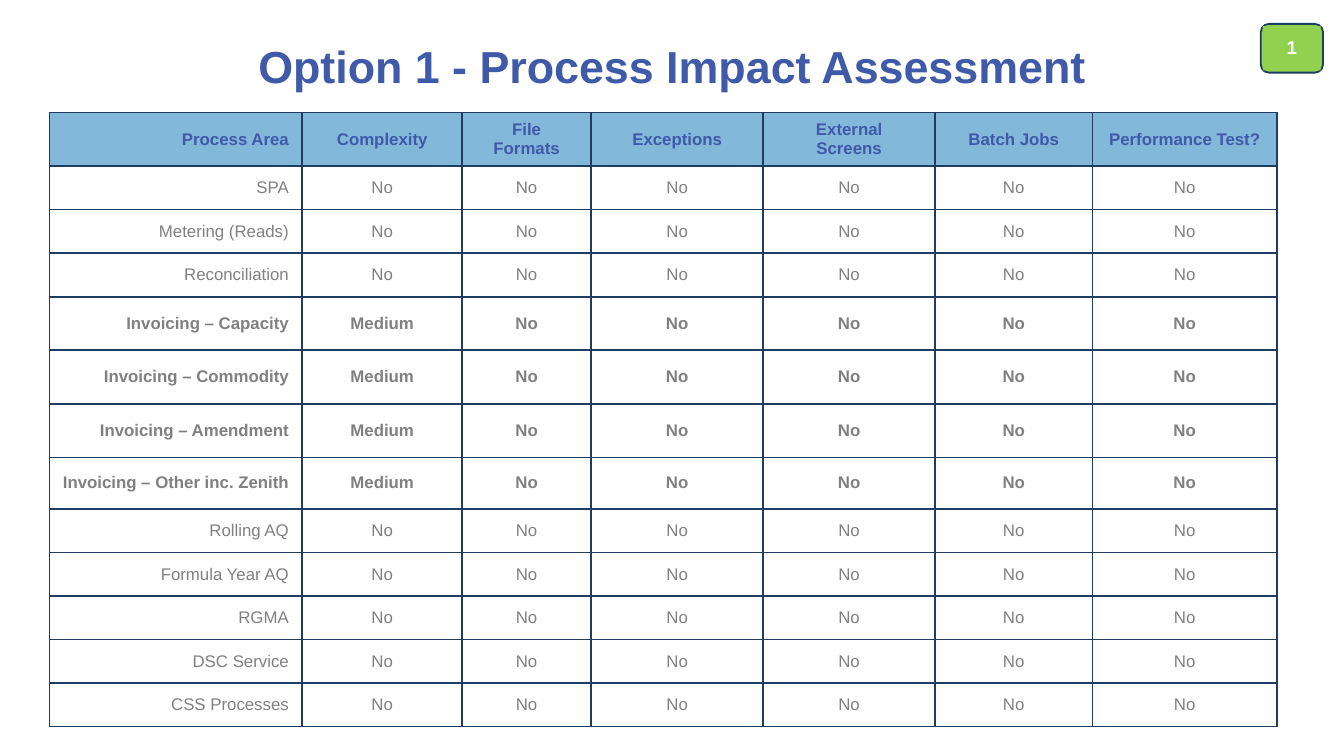
from dataclasses import dataclass

from lxml.etree import SubElement
from pptx import Presentation
from pptx.dml.color import RGBColor
from pptx.enum.shapes import MSO_SHAPE as Shape
from pptx.enum.text import MSO_ANCHOR as Anchor, MSO_AUTO_SIZE as AutoSize, PP_ALIGN as Align
from pptx.oxml.ns import qn
from pptx.util import Inches, Pt


@dataclass(frozen=True)
class Theme:
    font: str = "Arial"
    heading: str = "3E5AA8"
    header_fill: str = "84B8DA"
    body: str = "808080"
    white: str = "FFFFFF"
    badge: str = "92D050"
    line: str = "1D3E61"
    line_width: float = 1
    title_size: float = 24
    badge_size: float = 10
    table_size: float = 9


def write(frame, text, *, theme, size, color, bold=False, align=Align.CENTER, spacing=None):
    for index, line in enumerate(text.split("\n")):
        paragraph = frame.paragraphs[0] if index == 0 else frame.add_paragraph()
        paragraph.alignment = align
        if spacing:
            paragraph.line_spacing = spacing
        run = paragraph.add_run()
        run.text = line
        run.font.name = theme.font
        run.font.size = Pt(size)
        run.font.bold = bold
        run.font.color.rgb = RGBColor.from_string(color)


class SlideBuilder:
    GRID_COLUMNS, GRID_ROWS = 160, 90

    def __init__(self, presentation, theme):
        self.theme = theme
        self.slide = presentation.slides.add_slide(presentation.slide_layouts[5])
        self.column = presentation.slide_width / self.GRID_COLUMNS
        self.row = presentation.slide_height / self.GRID_ROWS

    def place(self, left, top, width, height):
        return (round(left * self.column), round(top * self.row),
                round(width * self.column), round(height * self.row))

    def title(self, text, *area):
        shape = self.slide.shapes.title
        shape.left, shape.top, shape.width, shape.height = self.place(*area)
        frame = shape.text_frame
        frame.auto_size = AutoSize.NONE
        frame.vertical_anchor = Anchor.MIDDLE
        write(frame, text, theme=self.theme, size=self.theme.title_size,
              color=self.theme.heading, bold=True)

    def panel(self, kind, *area, outlined=False):
        shape = self.slide.shapes.add_shape(kind, *self.place(*area))
        shape.shadow.inherit = False
        shape.fill.solid()
        shape.fill.fore_color.rgb = RGBColor.from_string(self.theme.badge)
        if outlined:
            shape.line.color.rgb = RGBColor.from_string(self.theme.line)
            shape.line.width = Pt(self.theme.line_width)
        else:
            shape.line.fill.background()
        return shape

    def badge(self, text, left, top, width, height, inset):
        self.panel(Shape.ROUNDED_RECTANGLE, left, top, width, height, outlined=True)
        label = self.panel(Shape.RECTANGLE, left + inset, top + inset,
                           width - 2 * inset, height - 2 * inset)
        frame = label.text_frame
        frame.margin_left = frame.margin_right = Inches(0.04)
        frame.margin_top = frame.margin_bottom = Inches(0.04)
        frame.vertical_anchor = Anchor.MIDDLE
        write(frame, text, theme=self.theme, size=self.theme.badge_size,
              color=self.theme.white, bold=True, spacing=0.9)

    def borders(self, cell):
        properties = cell._tc.get_or_add_tcPr()
        for side in ("lnL", "lnR", "lnT", "lnB"):
            line = SubElement(properties, qn(f"a:{side}"), w=str(Pt(self.theme.line_width)))
            fill = SubElement(line, qn("a:solidFill"))
            SubElement(fill, qn("a:srgbClr"), val=self.theme.line)

    def cell(self, cell, text, *, header, bold, align):
        theme = self.theme
        self.borders(cell)
        cell.fill.solid()
        cell.fill.fore_color.rgb = RGBColor.from_string(
            theme.header_fill if header else theme.white)
        cell.vertical_anchor = Anchor.MIDDLE
        write(cell.text_frame, text, theme=theme, size=theme.table_size, bold=bold,
              color=theme.heading if header else theme.body, align=align)

    def table(self, records, left, top, widths, heights, bold_rows):
        area = self.place(left, top, sum(widths), sum(heights))
        table = self.slide.shapes.add_table(len(records), len(widths), *area).table
        table.first_row = table.horz_banding = False
        for column, width in zip(table.columns, widths):
            column.width = round(width * self.column)
        for row, height in zip(table.rows, heights):
            row.height = round(height * self.row)
        for row_index, record in enumerate(records):
            for column_index, text in enumerate(record):
                self.cell(table.cell(row_index, column_index), text,
                          header=row_index == 0, bold=row_index in bold_rows,
                          align=Align.CENTER if column_index else Align.RIGHT)


HEADERS = ["Process Area", "Complexity", "File\nFormats", "Exceptions",
           "External\nScreens", "Batch Jobs", "Performance Test?"]
AREAS = ["SPA", "Metering (Reads)", "Reconciliation", "Invoicing – Capacity",
         "Invoicing – Commodity", "Invoicing – Amendment", "Invoicing – Other inc. Zenith",
         "Rolling AQ", "Formula Year AQ", "RGMA", "DSC Service", "CSS Processes"]
WIDTHS = [30.1, 19.05, 15.35, 20.5, 20.45, 18.75, 21.95]
TALL, WRAPPED, NORMAL = 6.38, 6.13, 5.19


def row_height(area):
    if "Other" in area:
        return WRAPPED
    return TALL if area.startswith("Invoicing") else NORMAL


def main():
    presentation = Presentation()
    presentation.slide_width = Inches(10)
    presentation.slide_height = presentation.slide_width * 9 // 16
    builder = SlideBuilder(presentation, Theme())
    builder.title("Option 1 - Process Impact Assessment", 8, 2.2, 144, 11.2)

    records, heights, bold_rows = [HEADERS], [TALL], {0}
    for index, area in enumerate(AREAS, start=1):
        affected = area.startswith("Invoicing")
        complexity = "Medium" if affected else "No"
        records.append([area, complexity] + ["No"] * (len(HEADERS) - 2))
        heights.append(row_height(area))
        if affected:
            bold_rows.add(index)
    builder.table(records, 5.87, 13.4, WIDTHS, heights, bold_rows)
    builder.badge("1", 150.1, 2.85, 7.4, 5.8, 0.26)
    presentation.save("out.pptx")


if __name__ == "__main__":
    main()
